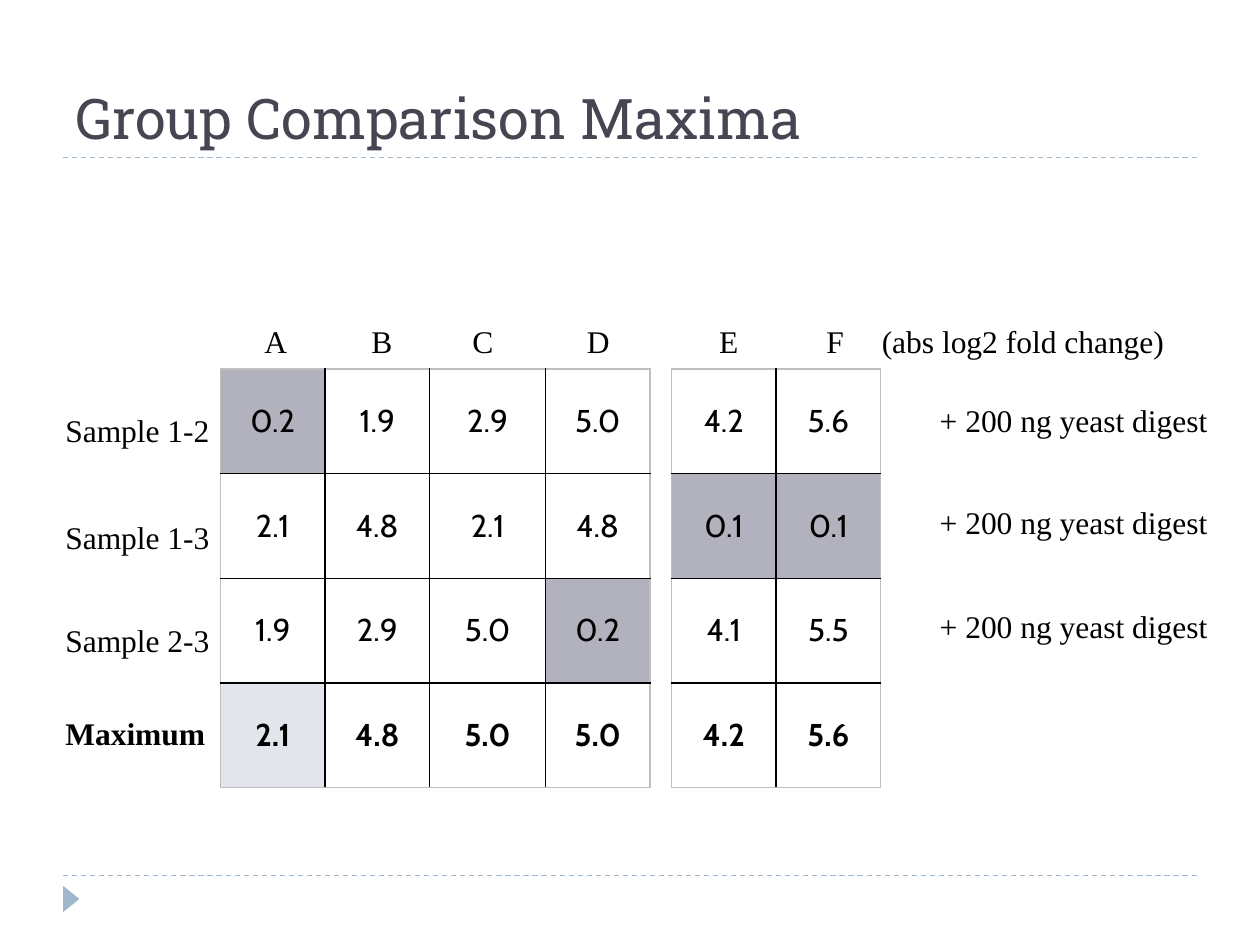
from lxml.etree import SubElement
from pptx import Presentation
from pptx.dml.color import RGBColor
from pptx.enum.dml import MSO_LINE_DASH_STYLE as Dash
from pptx.enum.shapes import MSO_CONNECTOR as Connector, MSO_SHAPE as Shape
from pptx.enum.text import MSO_ANCHOR as Anchor, MSO_AUTO_SIZE as AutoSize, PP_ALIGN as Align
from pptx.oxml.ns import qn
from pptx.util import Inches, Pt

COLORS = {
    "title": "464653",
    "text": "000000",
    "accent": "9FB8CD",
    "grid": "000000",
    "frame": "BFBFBF",
    "plain": "FFFFFF",
    "low": "B2B2BE",
    "maximum": "E3E5ED",
}
TITLE_FONT = {"name": "Roboto Slab", "size": Pt(32), "bold": False}
LABEL_FONT = {"name": "Times New Roman", "size": Pt(18), "bold": False}
VALUE_FONT = {"name": "Cabin", "size": Pt(18), "bold": False}
BOLD = {"bold": True}

CELL = 0.83
TABLE_TOP = 2.93
MAIN_VALUES = [
    ["0.2", "1.9", "2.9", "5.0"],
    ["2.1", "4.8", "2.1", "4.8"],
    ["1.9", "2.9", "5.0", "0.2"],
    ["2.1", "4.8", "5.0", "5.0"],
]
YEAST_VALUES = [["4.2", "5.6"], ["0.1", "0.1"], ["4.1", "5.5"], ["4.2", "5.6"]]
MAIN_FILLS = {(0, 0): "low", (2, 3): "low", (3, 0): "maximum"}
YEAST_FILLS = {(1, 0): "low", (1, 1): "low"}
ROW_LABELS = [("Sample 1-2", 3.21), ("Sample 1-3", 4.06), ("Sample 2-3", 4.88)]
YEAST_TOPS = [3.13, 3.94, 4.77]
HEADINGS = ["A", "B", "C", "D", "E", "F", "(abs log2 fold change)"]
HEADING_TABS = [0.85, 1.65, 2.56, 3.61, 4.46, 4.9]


def color(name):
    return RGBColor.from_string(COLORS[name])


def format_font(font, values, color_name="text"):
    for name, value in values.items():
        setattr(font, name, value)
    font.color.rgb = color(color_name)


def add_title(slide, text):
    title = slide.shapes.title
    box = {"left": 0.5, "top": 0.17, "width": 9, "height": 1.08}
    for name, value in box.items():
        setattr(title, name, Inches(value))
    title.text_frame.vertical_anchor = Anchor.BOTTOM
    paragraph = title.text_frame.paragraphs[0]
    paragraph.alignment = Align.LEFT
    run = paragraph.add_run()
    run.text = text
    format_font(run.font, TITLE_FONT, "title")


def add_rule(slide, y):
    rule = slide.shapes.add_connector(
        Connector.STRAIGHT, Inches(0.5), Inches(y), Inches(9.5), Inches(y))
    rule.line.color.rgb = color("accent")
    rule.line.width = Pt(0.75)
    rule.line.dash_style = Dash.DASH
    SubElement(rule._element.spPr, qn("a:effectLst"))


def add_marker(slide):
    marker = slide.shapes.add_shape(
        Shape.ISOSCELES_TRIANGLE, Inches(0.46), Inches(7.07), Inches(0.21), Inches(0.13))
    marker.rotation = 90
    marker.shadow.inherit = False
    marker.fill.solid()
    marker.fill.fore_color.rgb = color("accent")
    marker.line.fill.background()


def add_label(slide, text, left, top, width, wrap=False, **changes):
    label = slide.shapes.add_textbox(Inches(left), Inches(top), Inches(width), Inches(0.4))
    label.text_frame.word_wrap = wrap
    label.text_frame.auto_size = AutoSize.SHAPE_TO_FIT_TEXT
    paragraph = label.text_frame.paragraphs[0]
    run = paragraph.add_run()
    run.text = text
    format_font(run.font, LABEL_FONT | changes)
    return paragraph


def add_headings(slide):
    paragraph = add_label(slide, "\t".join(HEADINGS), 2, 2.51, 7.5, wrap=True)
    tabs = SubElement(paragraph._p.get_or_add_pPr(), qn("a:tabLst"))
    for position in HEADING_TABS:
        SubElement(tabs, qn("a:tab"), pos=str(Inches(position)), algn="l")


def set_borders(cell, sides):
    properties = cell._tc.get_or_add_tcPr()
    for index, (side, color_name) in enumerate(sides.items()):
        line = properties.makeelement(qn(f"a:{side}"), {"w": str(Pt(1))})
        fill = SubElement(line, qn("a:solidFill"))
        SubElement(fill, qn("a:srgbClr"), val=COLORS[color_name])
        properties.insert(index, line)


def format_cell(cell, text, fill_name, changes):
    cell.vertical_anchor = Anchor.MIDDLE
    cell.fill.solid()
    cell.fill.fore_color.rgb = color(fill_name)
    paragraph = cell.text_frame.paragraphs[0]
    paragraph.alignment = Align.CENTER
    run = paragraph.add_run()
    run.text = text
    format_font(run.font, VALUE_FONT | changes)


def add_values(slide, values, left, widths, fills):
    last_row, last_column = len(values) - 1, len(widths) - 1
    table = slide.shapes.add_table(
        len(values), len(widths), Inches(left), Inches(TABLE_TOP),
        Inches(sum(widths)), Inches(CELL * len(values))).table
    table.first_row = table.horz_banding = False
    for column, width in zip(table.columns, widths):
        column.width = Inches(width)
    for r, row in enumerate(values):
        table.rows[r].height = Inches(CELL)
        for c, text in enumerate(row):
            cell = table.cell(r, c)
            format_cell(cell, text, fills.get((r, c), "plain"), BOLD if r == last_row else {})
            outer = {"lnL": c == 0, "lnR": c == last_column,
                     "lnT": r == 0, "lnB": r == last_row}
            set_borders(cell, {side: "frame" if edge else "grid" for side, edge in outer.items()})


def main():
    presentation = Presentation()
    presentation.slide_width = Inches(10)
    presentation.slide_height = Inches(7.5)
    slide = presentation.slides.add_slide(presentation.slide_layouts[5])
    for y in (6.95, 1.25):
        add_rule(slide, y)
    add_marker(slide)
    add_title(slide, "Group Comparison Maxima")
    add_headings(slide)
    add_values(slide, MAIN_VALUES, 1.75, [CELL, CELL, 0.92, CELL], MAIN_FILLS)
    add_values(slide, YEAST_VALUES, 5.33, [CELL, CELL], YEAST_FILLS)
    for text, top in ROW_LABELS:
        add_label(slide, text, 0.42, top, 1.36)
    add_label(slide, "Maximum", 0.42, 5.62, 1.32, **BOLD)
    for top in YEAST_TOPS:
        add_label(slide, "+ 200 ng yeast digest", 7.36, top, 2.46)
    presentation.save("out.pptx")


if __name__ == "__main__":
    main()
